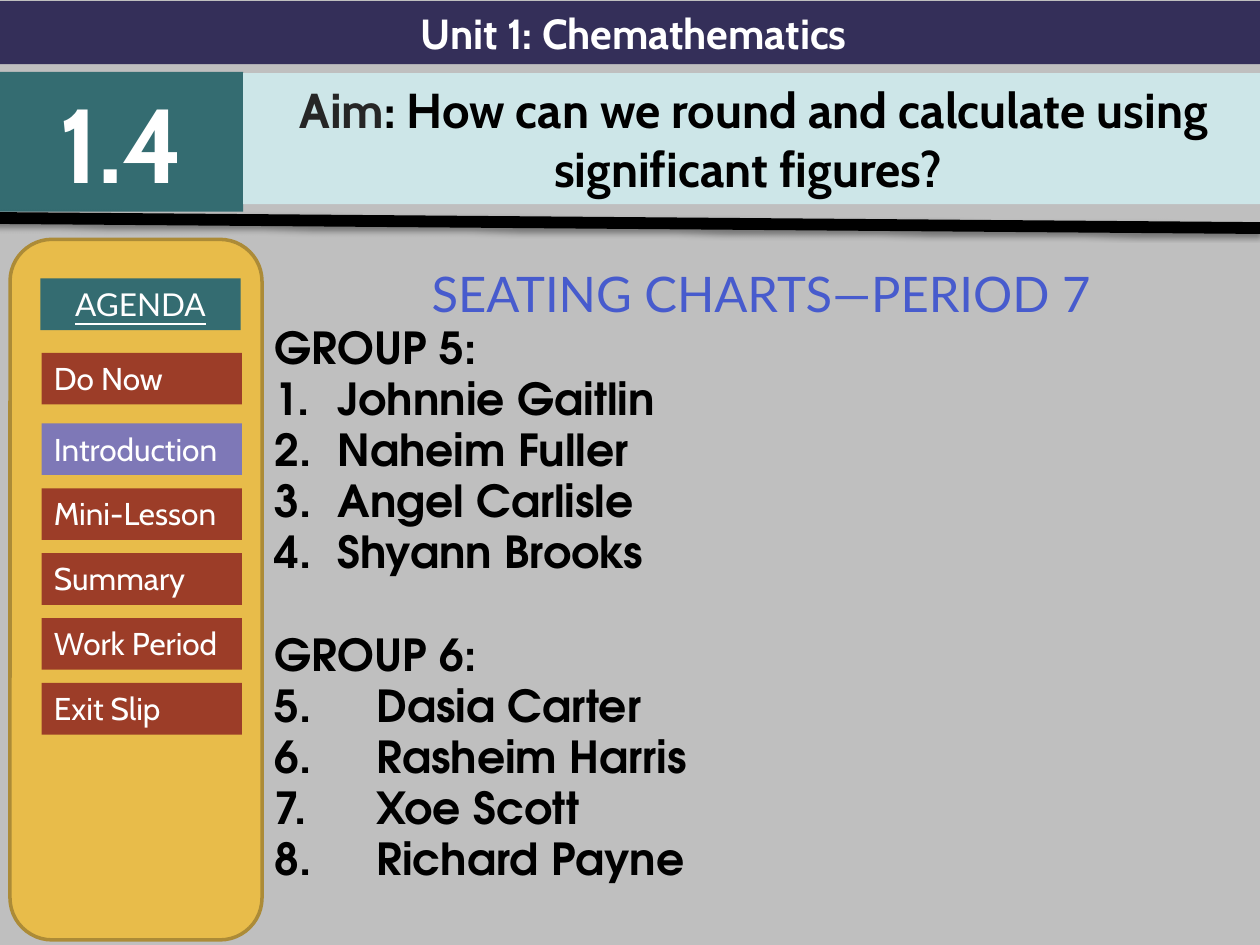
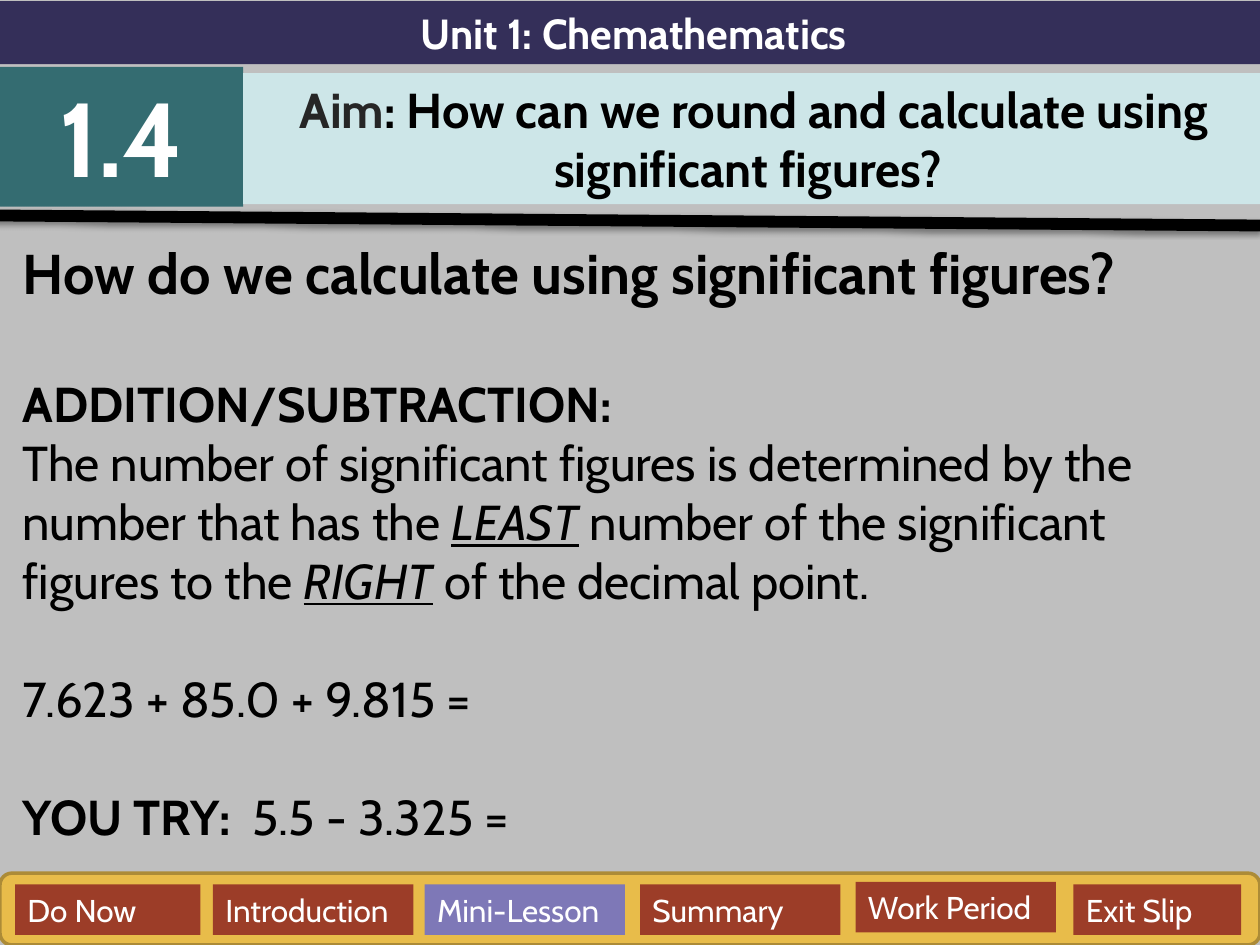
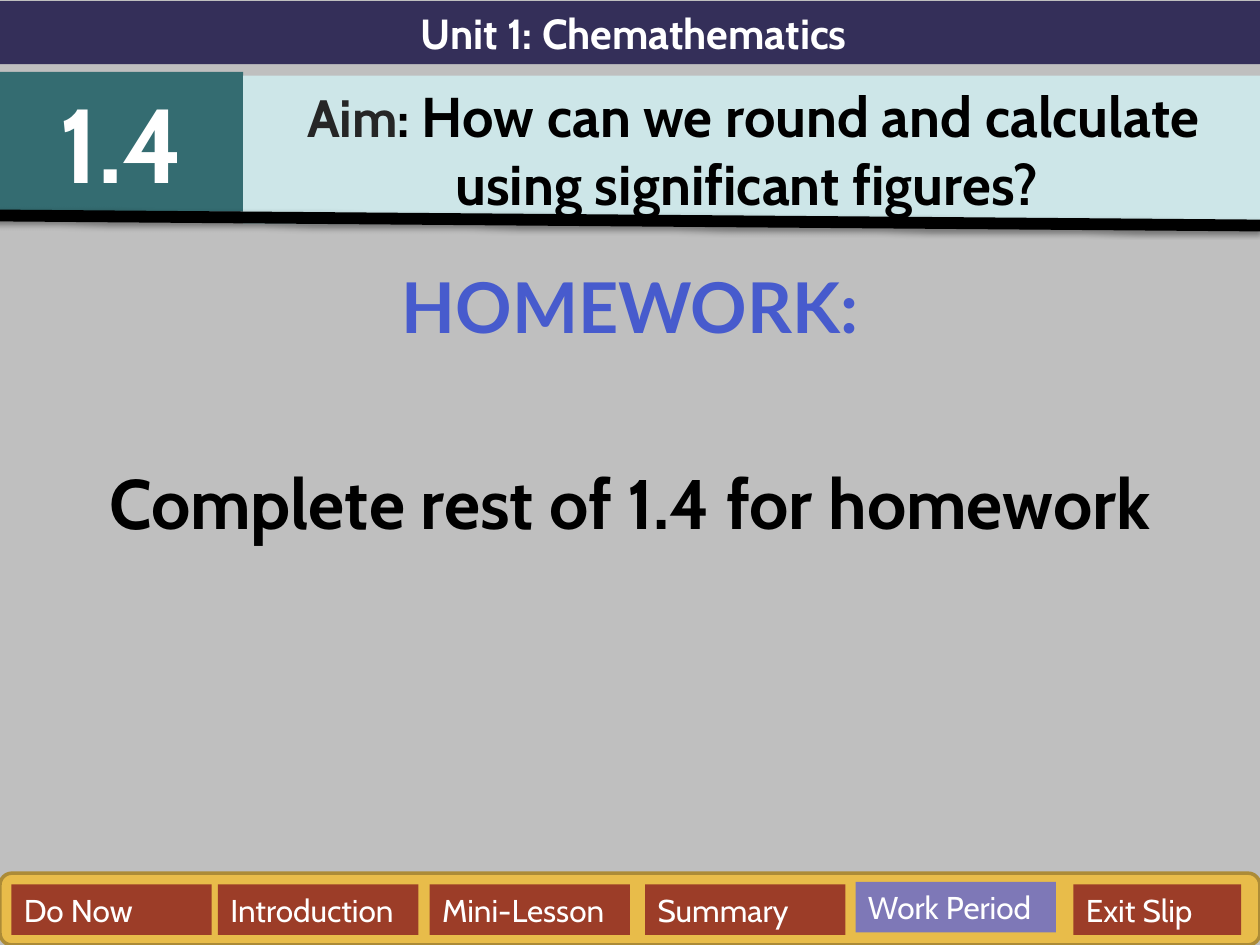
import pptx
import pptx.util
import pptx.dml.color
import pptx.enum.shapes
import pptx.enum.text
import pptx.oxml
import pptx.oxml.ns

COLORS = {
    "background": "BFBFBF", "unit": "342F59", "lesson": "346C71", "aim": "CDE6E8",
    "panel": "E8BC4A", "panel edge": "AC8B37", "stage": "9C3D28", "current": "7E78B7",
    "heading": "475BCD", "aim label": "262626", "black": "000000", "white": "FFFFFF",
}
STAGES = ["Do Now", "Introduction", "Mini-Lesson", "Summary", "Work Period", "Exit Slip"]
RECT = pptx.enum.shapes.MSO_SHAPE.RECTANGLE
ROUNDED = pptx.enum.shapes.MSO_SHAPE.ROUNDED_RECTANGLE
CENTER = pptx.enum.text.PP_ALIGN.CENTER
LEFT = pptx.enum.text.PP_ALIGN.LEFT

deck = pptx.Presentation()
deck.slide_width = pptx.util.Inches(10)
deck.slide_height = pptx.util.Inches(7.5)

# Grid of 100 columns by 75 rows
COL = deck.slide_width / 100
ROW = deck.slide_height / 75


def block(slide, box, fill=None, edge=None, form=RECT):
    """Place a block, given in columns and rows, and return its text frame."""
    left, top, width, height = box
    place = [int(left * COL), int(top * ROW), int(width * COL), int(height * ROW)]
    if fill is None:
        shape = slide.shapes.add_textbox(*place)
    else:
        shape = slide.shapes.add_shape(form, *place)
        shape.shadow.inherit = False
        shape.fill.solid()
        shape.fill.fore_color.rgb = pptx.dml.color.RGBColor.from_string(COLORS[fill])
        if edge:
            shape.line.color.rgb = pptx.dml.color.RGBColor.from_string(COLORS[edge])
            shape.line.width = pptx.util.Pt(2)
        else:
            shape.line.fill.background()
    shape.text_frame.word_wrap = True
    shape.text_frame.vertical_anchor = pptx.enum.text.MSO_ANCHOR.TOP
    return shape.text_frame


def write(frame, *runs, align=LEFT, before=0, spacing=None, number=None, hang=0, **style):
    """Add a paragraph; a run is a text or a pair of text and its own style."""
    paragraph = frame.paragraphs[-1]
    if paragraph.runs:
        paragraph = frame.add_paragraph()
    paragraph.alignment = align
    paragraph.space_before = pptx.util.Pt(before)
    if spacing:
        paragraph.line_spacing = spacing
    if number:
        properties = paragraph._p.get_or_add_pPr()
        properties.set("marL", str(pptx.util.Inches(hang)))
        properties.set("indent", str(-pptx.util.Inches(hang)))
        numbering = pptx.oxml.ns.qn("a:buAutoNum")
        bullet = properties.makeelement(numbering, {"type": "arabicPeriod", "startAt": str(number)})
        properties.append(bullet)
    for item in runs:
        text, own = (item, {}) if isinstance(item, str) else item
        look = {"size": 18, "font": "Cabin", "color": "black", **style, **own}
        run = paragraph.add_run()
        run.text = text
        run.font.size = pptx.util.Pt(look["size"])
        run.font.name = look["font"]
        run.font.color.rgb = pptx.dml.color.RGBColor.from_string(COLORS[look["color"]])
        run.font.bold = look.get("bold", False)
        run.font.italic = look.get("italic", False)
        run.font.underline = look.get("underline", False)


# Header of each slide: lesson top, aim top and height, aim sizes, rule top
headers = [
    (5.7, 5.8, 10.4, 28, 28, 17.3),
    (5.3, 5.8, 10.4, 28, 28, 17.1),
    (5.7, 6, 11.8, 30, 32, 17.1),
]
slides = []
for lesson_top, aim_top, aim_height, label_size, aim_size, rule_top in headers:
    slide = deck.slides.add_slide(deck.slide_layouts[6])
    slides.append(slide)
    slide.background.fill.solid()
    slide.background.fill.fore_color.rgb = pptx.dml.color.RGBColor.from_string(COLORS["background"])

    unit = block(slide, (0, 0.1, 100.6, 5), "unit")
    write(unit, "Unit 1: Chemathematics", align=CENTER, size=24, color="white", bold=True)
    lesson = block(slide, (0, lesson_top, 19.3, 11.1), "lesson")
    write(lesson, "1.4", align=CENTER, size=60, color="white", bold=True)
    aim = block(slide, (19.3, aim_top, 81, aim_height), "aim")
    write(aim, ("Aim", {"color": "aim label", "size": label_size}), (": ", {"size": label_size}),
          "How can we round and calculate using significant figures? ",
          align=CENTER, size=aim_size, bold=True)

    # Slanted rule with a soft shadow
    rule = slide.shapes.add_connector(
        pptx.enum.shapes.MSO_CONNECTOR.STRAIGHT,
        int(-0.5 * COL), int(rule_top * ROW), int(100 * COL), int((rule_top + 0.8) * ROW))
    rule.line.color.rgb = pptx.dml.color.RGBColor.from_string(COLORS["black"])
    rule.line.width = pptx.util.Pt(6.75)
    rule._element.spPr.append(pptx.oxml.parse_xml(
        f'<a:effectLst {pptx.oxml.ns.nsdecls("a")}>'
        f'<a:outerShdw blurRad="{pptx.util.Pt(3.1)}" dist="{pptx.util.Pt(1.6)}" dir="5400000"'
        ' rotWithShape="0"><a:srgbClr val="000000"><a:alpha val="38000"/></a:srgbClr>'
        '</a:outerShdw></a:effectLst>'))

seating, calculating, homework = slides

# Agenda panel beside the seating chart
block(seating, (0.8, 19, 20, 55.6), "panel", "panel edge", ROUNDED)
agenda = block(seating, (3.2, 22.1, 15.9, 4.1), "lesson")
write(agenda, "AGENDA", align=CENTER, font="Lato", color="white", underline=True)
for index, stage in enumerate(STAGES):
    top = 33.6 + 5.15 * (index - 1) if index else 28
    entry = block(seating, (3.3, top, 15.9, 4.1), "current" if stage == "Introduction" else "stage")
    write(entry, stage, color="white")

# Agenda bar along the bottom: current stage, left edges, width of the first entry
bars = [
    (calculating, "Mini-Lesson", [1.2, 16.9, 33.7, 50.8, 67.9, 85.2], 14.7),
    (homework, "Work Period", [0.9, 17.3, 34.1, 51.2, 67.9, 85.2], 15.9),
]
for slide, current, lefts, first_width in bars:
    block(slide, (0, 69.3, 100, 5.7), "panel", "panel edge", ROUNDED)
    widths = [first_width] + [15.9] * 4 + [13.3]
    for stage, left, width in zip(STAGES, lefts, widths):
        top = 70 if stage == "Work Period" else 70.2
        entry = block(slide, (left, top, width, 4), "current" if stage == current else "stage")
        write(entry, stage, color="white")

# Seating chart
groups = [
    ("GROUP 5:", 1, 0.5, 5, ["Johnnie Gaitlin", "Naheim Fuller", "Angel Carlisle", "Shyann Brooks"]),
    ("GROUP 6:", 5, 0.81, 34.3, ["Dasia Carter", "Rasheim Harris", "Xoe Scott", "Richard Payne"]),
]
chart = block(seating, (20.8, 19, 79.2, 56))
write(chart, "SEATING CHARTS—PERIOD 7", align=CENTER, spacing=1.3,
      size=28, font="Lato", color="heading")
seat = {"size": 25.2, "font": "TeX Gyre Adventor", "bold": True, "spacing": 0.8}
for group, start, hang, gap, students in groups:
    write(chart, group, before=gap, **seat)
    for student in students:
        write(chart, student, before=5, number=start, hang=hang, **seat)

# Rule for addition and subtraction
emphasis = {"italic": True, "underline": True}
notes = block(calculating, (0.8, 18.4, 99.2, 62.1))
write(notes, "How do we calculate using significant figures?", size=32, bold=True)
write(notes, "ADDITION/SUBTRACTION:", before=39, size=28, bold=True)
write(notes, "The number of significant figures is determined by the number that has the ",
      ("LEAST", emphasis), " number of the significant figures to the ",
      ("RIGHT", emphasis), " of the decimal point.", size=28)
write(notes, "7.623 + 85.0 + 9.815 =", before=34, size=28)
write(notes, ("YOU TRY:  ", {"bold": True}), "5.5 - 3.325 =", before=34, size=28)

# Homework
task = block(homework, (0, 20.4, 100, 54.6))
write(task, "HOMEWORK:", align=CENTER, size=40, font="Lato", color="heading", bold=True)
write(task, "Complete rest of 1.4 for homework", align=CENTER, before=64, size=40, bold=True)

deck.save("out.pptx")
